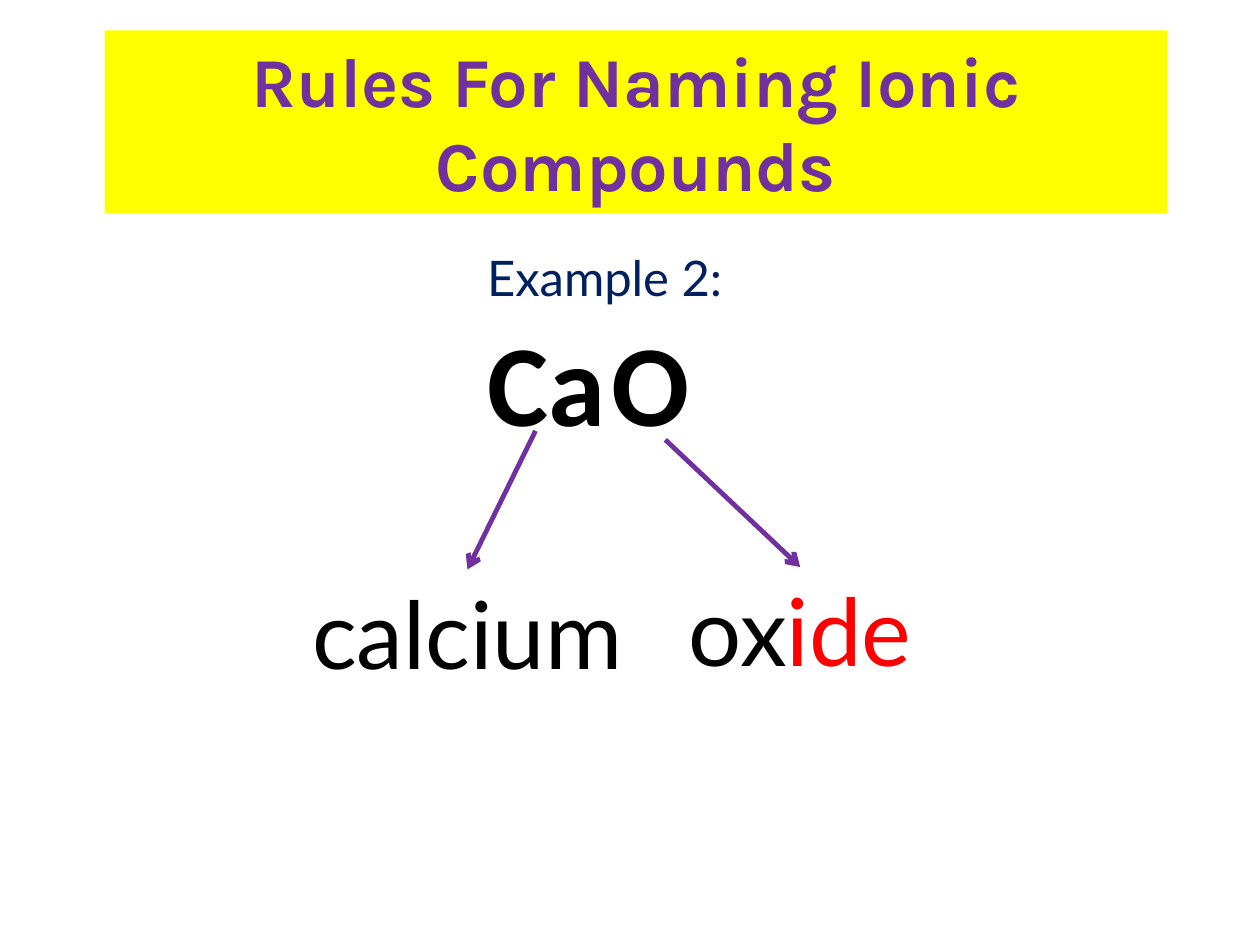
"""Build a slide that names the ionic compound CaO."""
from dataclasses import dataclass

from lxml.etree import SubElement
from pptx import Presentation
from pptx.dml.color import RGBColor
from pptx.enum.shapes import MSO_CONNECTOR
from pptx.enum.text import MSO_ANCHOR, MSO_AUTO_SIZE, PP_ALIGN
from pptx.oxml.ns import qn
from pptx.util import Pt


@dataclass(frozen=True)
class Theme:
    purple: RGBColor = RGBColor(0x70, 0x30, 0xA0)
    yellow: RGBColor = RGBColor(0xFF, 0xFF, 0x00)
    navy: RGBColor = RGBColor(0x00, 0x20, 0x60)
    black: RGBColor = RGBColor(0x00, 0x00, 0x00)
    red: RGBColor = RGBColor(0xFF, 0x00, 0x00)
    heading_font: str = "Karla"
    body_font: str = "Lato"
    formula_font: str = "Calibri"
    heading_size: float = 40
    example_size: float = 28
    formula_size: float = 66
    name_size: float = 53.6


theme = Theme()


def write(holder, parts, font, size, color, bold=False):
    paragraph = holder.text_frame.paragraphs[0]
    paragraph.alignment = PP_ALIGN.CENTER
    paragraph.font.name = font
    paragraph.font.size = Pt(size)
    paragraph.font.bold = bold
    if len({part_color for _, part_color in parts}) == 1:
        paragraph.font.color.rgb = color
    for text, part_color in parts:
        run = paragraph.add_run()
        run.text = text
        if part_color != color:
            run.font.color.rgb = part_color


def add_label(box, parts, font, size, color, bold=False, wrap=True):
    label = slide.shapes.add_textbox(*map(Pt, box))
    label.text_frame.word_wrap = wrap
    if not wrap:
        label.text_frame.auto_size = MSO_AUTO_SIZE.SHAPE_TO_FIT_TEXT
    write(label, parts, font, size, color, bold)
    return label


presentation = Presentation()
presentation.slide_width, presentation.slide_height = Pt(720), Pt(540)
slide = presentation.slides.add_slide(presentation.slide_layouts[5])

heading = slide.shapes.title
heading.left, heading.top, heading.width, heading.height = map(Pt, (59.8, 17.3, 607, 104.4))
heading.fill.solid()
heading.fill.fore_color.rgb = theme.yellow
heading.text_frame.vertical_anchor = MSO_ANCHOR.MIDDLE
write(heading, [("Rules For Naming Ionic Compounds", theme.purple)],
      theme.heading_font, theme.heading_size, theme.purple, bold=True)

add_label((167, 138.2, 357.1, 45.4), [("Example 2:", theme.navy)],
          theme.body_font, theme.example_size, theme.navy)

for symbol, left, width in (("Ca", 264.2, 95.8), ("O", 342, 59.8)):
    add_label((left, 174.2, width, 126), [(symbol, theme.black)],
              theme.formula_font, theme.formula_size, theme.black, bold=True, wrap=False)

ions = (
    ((139.7, 325.4), (306, 246.2), [("calcium", theme.black)]),
    ((329.8, 324), (380.2, 251.3), [("ox", theme.black), ("ide", theme.red)]),
)
for corner, arrow_start, name_parts in ions:
    ion_name = add_label((*corner, 254.9, 59.8), name_parts,
                         theme.body_font, theme.name_size, theme.black)
    arrow = slide.shapes.add_connector(
        MSO_CONNECTOR.STRAIGHT, *map(Pt, arrow_start), *map(Pt, corner))
    arrow.end_connect(ion_name, 0)
    arrow.line.color.rgb = theme.purple
    arrow.line.width = Pt(2.75)
    SubElement(arrow.line._get_or_add_ln(), qn("a:tailEnd"), type="arrow")
    SubElement(arrow._element.spPr, qn("a:effectLst"))

presentation.save("out.pptx")
